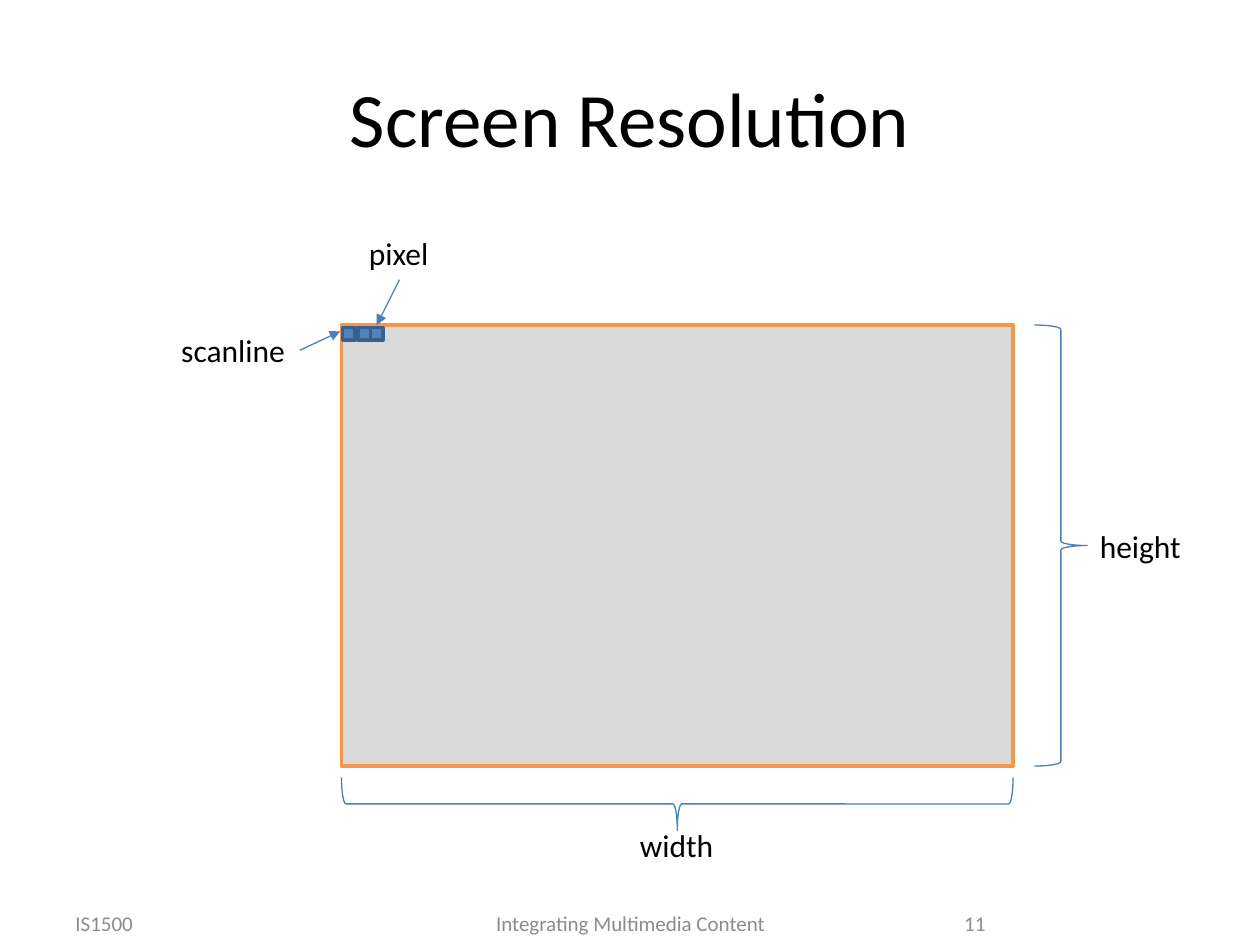
from typing import NamedTuple

from lxml.etree import SubElement
from pptx import Presentation
from pptx.dml.color import RGBColor
from pptx.enum.shapes import MSO_CONNECTOR, MSO_SHAPE
from pptx.enum.text import MSO_ANCHOR, MSO_AUTO_SIZE, PP_ALIGN
from pptx.oxml.ns import qn
from pptx.slide import Slide
from pptx.util import Inches, Pt

COLORS = {
    "text": "000000",
    "footer": "8C8C8C",
    "screen": "D9D9D9",
    "screen_edge": "F79646",
    "pixel": "4F81BD",
    "pixel_edge": "3A5F8C",
    "guide": "4B7EBC",
}


class Box(NamedTuple):
    left: float
    top: float
    width: float
    height: float


class Caption(NamedTuple):
    text: str
    box: Box
    size: int = 18
    color: str = "text"
    align: PP_ALIGN = PP_ALIGN.LEFT
    framed: bool = False


class Block(NamedTuple):
    box: Box
    fill: str | None
    edge: str
    weight: float
    preset: MSO_SHAPE = MSO_SHAPE.RECTANGLE
    rotation: float = 0


class Arrow(NamedTuple):
    start: tuple[float, float]
    end: tuple[float, float]


SCREEN = Box(2.71, 2.58, 5.33, 3.5)
BRACE_DEPTH = 0.42
BRACE_MIDDLE_Y = 6.38
WIDTH_BRACE = Box(
    SCREEN.left + (SCREEN.width - BRACE_DEPTH) / 2,
    BRACE_MIDDLE_Y - SCREEN.width / 2,
    BRACE_DEPTH,
    SCREEN.width,
)
HEIGHT_BRACE = Box(8.21, SCREEN.top, BRACE_DEPTH, SCREEN.height)
PIXEL_LEFTS = (2.72, 2.84, 2.94)

BLOCKS = [
    Block(SCREEN, "screen", "screen_edge", 2),
    Block(HEIGHT_BRACE, None, "guide", 0.75, MSO_SHAPE.RIGHT_BRACE),
    Block(WIDTH_BRACE, None, "guide", 0.75, MSO_SHAPE.RIGHT_BRACE, 90),
    *(Block(Box(left, 2.6, 0.1, 0.1), "pixel", "pixel_edge", 2) for left in PIXEL_LEFTS),
]
CAPTIONS = [
    Caption("Screen Resolution", Box(0.5, 0.3, 9, 1.25), 44, "text", PP_ALIGN.CENTER, True),
    Caption("IS1500", Box(0.5, 7.17, 2.33, 0.31), 12, "footer", PP_ALIGN.LEFT, True),
    Caption("Integrating Multimedia Content", Box(3.42, 7.17, 3.17, 0.31), 12, "footer",
            PP_ALIGN.CENTER, True),
    Caption("11", Box(7.17, 7.17, 0.75, 0.31), 12, "footer", PP_ALIGN.RIGHT, True),
    Caption("width", Box(4.98, 6.51, 0.79, 0.4)),
    Caption("height", Box(8.63, 4.13, 0.85, 0.4)),
    Caption("scanline", Box(1.34, 2.58, 1.03, 0.4)),
    Caption("pixel", Box(2.83, 1.81, 0.68, 0.4)),
]
ARROWS = [
    Arrow((2.38, 2.78), (2.7, 2.63)),
    Arrow((3.17, 2.22), (2.99, 2.58)),
]


def rgb(name: str) -> RGBColor:
    """Return the named colour."""
    return RGBColor.from_string(COLORS[name])


def draw_block(slide: Slide, block: Block) -> None:
    """Draw one outlined preset shape."""
    shape = slide.shapes.add_shape(block.preset, *map(Inches, block.box))
    shape.rotation = block.rotation
    shape.shadow.inherit = False
    if block.fill:
        shape.fill.solid()
        shape.fill.fore_color.rgb = rgb(block.fill)
    else:
        shape.fill.background()
    shape.line.color.rgb = rgb(block.edge)
    shape.line.width = Pt(block.weight)


def draw_caption(slide: Slide, caption: Caption) -> None:
    """Write one line of text, either in a fixed frame or a fitted one."""
    frame = slide.shapes.add_textbox(*map(Inches, caption.box)).text_frame
    frame.word_wrap = caption.framed
    if caption.framed:
        frame.auto_size = MSO_AUTO_SIZE.NONE
        frame.vertical_anchor = MSO_ANCHOR.MIDDLE
    else:
        frame.auto_size = MSO_AUTO_SIZE.SHAPE_TO_FIT_TEXT
    paragraph = frame.paragraphs[0]
    paragraph.text = caption.text
    paragraph.alignment = caption.align
    paragraph.font.name = "Calibri"
    paragraph.font.size = Pt(caption.size)
    paragraph.font.color.rgb = rgb(caption.color)


def draw_arrow(slide: Slide, arrow: Arrow) -> None:
    """Draw a thin line with a triangle at its end."""
    connector = slide.shapes.add_connector(
        MSO_CONNECTOR.STRAIGHT, *map(Inches, arrow.start + arrow.end)
    )
    connector.line.color.rgb = rgb("guide")
    connector.line.width = Pt(0.75)
    SubElement(connector.line._get_or_add_ln(), qn("a:tailEnd"), type="triangle")
    SubElement(connector._element.spPr, qn("a:effectLst"))


def main() -> None:
    """Build the screen resolution slide."""
    presentation = Presentation()
    presentation.slide_width = Inches(10)
    presentation.slide_height = Inches(7.5)
    slide = presentation.slides.add_slide(presentation.slide_layouts[6])
    for block in BLOCKS:
        draw_block(slide, block)
    for caption in CAPTIONS:
        draw_caption(slide, caption)
    for arrow in ARROWS:
        draw_arrow(slide, arrow)
    presentation.save("out.pptx")


if __name__ == "__main__":
    main()
